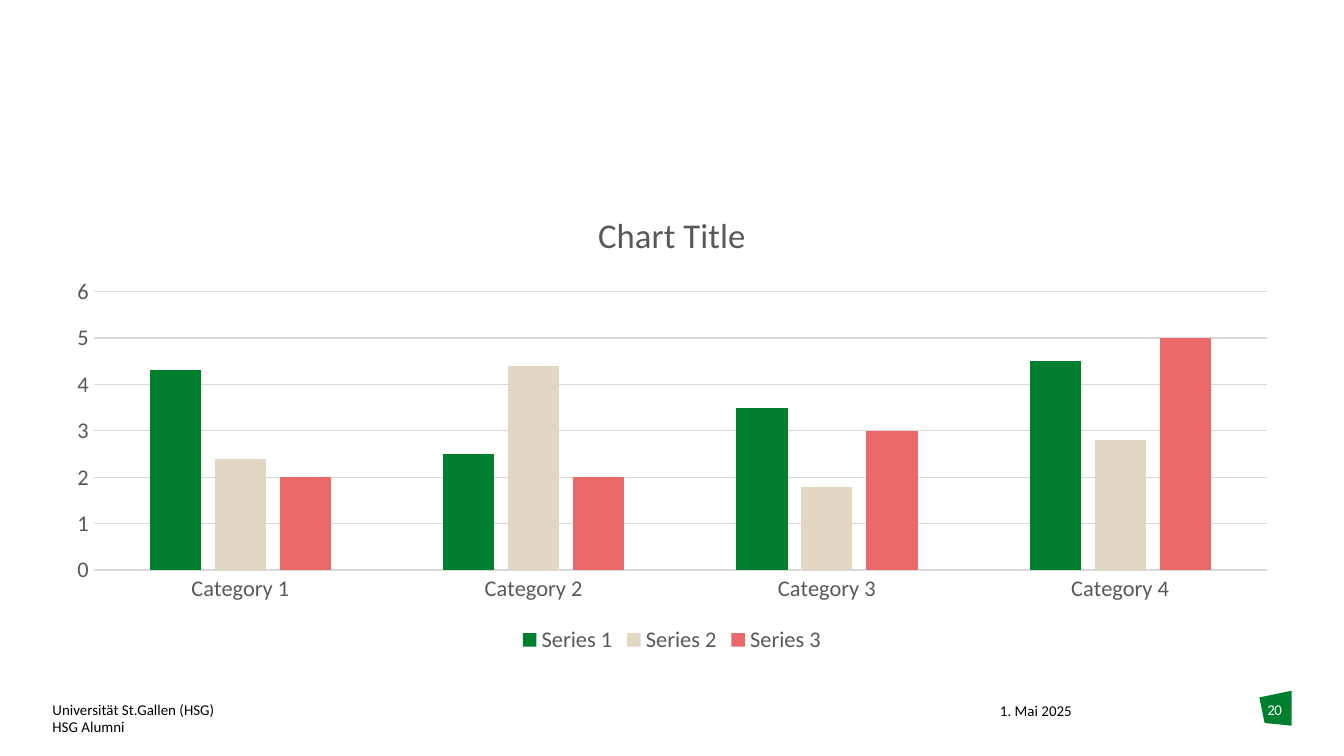
from pptx import Presentation
from pptx.chart.data import CategoryChartData
from pptx.dml.color import RGBColor
from pptx.enum import chart as ch, text
from pptx.util import Inches, Pt

FONT = "Calibri"
COLORS = {
    "green": "00802F",
    "sand": "E1D7C3",
    "red": "EB6969",
    "label": "595959",
    "grid": "D9D9D9",
    "black": "000000",
    "white": "FFFFFF",
}
CATEGORIES = ["Category 1", "Category 2", "Category 3", "Category 4"]
SERIES = [
    ("Series 1", "green", [4.3, 2.5, 3.5, 4.5]),
    ("Series 2", "sand", [2.4, 4.4, 1.8, 2.8]),
    ("Series 3", "red", [2, 2, 3, 5]),
]
BADGE = [(9.37, 5.19), (9.61, 5.14), (9.61, 5.4), (9.41, 5.38)]


def rgb(name):
    return RGBColor.from_string(COLORS[name])


def style_font(font, size, color):
    font.name = FONT
    font.size = Pt(size)
    font.bold = False
    font.color.rgb = rgb(color)


def style_line(line, color):
    line.color.rgb = rgb(color)
    line.width = Pt(0.75)


def add_label(s, box, lines, color="black", align=text.PP_ALIGN.LEFT):
    """Small footer text; lines are parted by line breaks."""
    tf = s.shapes.add_textbox(*map(Inches, box)).text_frame
    tf.word_wrap = True
    tf.margin_left = tf.margin_right = tf.margin_top = tf.margin_bottom = 0
    p = tf.paragraphs[0]
    p.alignment = align
    for i, line in enumerate(lines):
        if i:
            p.add_line_break()
        r = p.add_run()
        r.text = line
        style_font(r.font, 8, color)
        if color == "white":
            r.font._element.set("spc", "-30")


def add_badge(s):
    points = [(Inches(x), Inches(y)) for x, y in BADGE]
    builder = s.shapes.build_freeform(*points[0])
    builder.add_line_segments(points[1:], close=True)
    sp = builder.convert_to_shape()
    sp.shadow.inherit = False
    sp.fill.solid()
    sp.fill.fore_color.rgb = rgb("green")
    sp.line.fill.background()


def add_column_chart(s):
    data = CategoryChartData()
    data.categories = CATEGORIES
    for name, _, values in SERIES:
        data.add_series(name, values)
    chart = s.shapes.add_chart(
        ch.XL_CHART_TYPE.COLUMN_CLUSTERED,
        Inches(0.39), Inches(1.4), Inches(9.22), Inches(3.5), data).chart
    style_font(chart.font, 10, "black")

    # Title and legend
    tf = chart.chart_title.text_frame
    tf.text = "Chart Title"
    style_font(tf.paragraphs[0].runs[0].font, 18.6, "label")
    chart.chart_title.include_in_layout = False
    chart.has_legend = True
    chart.legend.position = ch.XL_LEGEND_POSITION.BOTTOM
    chart.legend.include_in_layout = False
    style_font(chart.legend.font, 12, "label")

    # Axes
    for axis in (chart.category_axis, chart.value_axis):
        axis.major_tick_mark = axis.minor_tick_mark = ch.XL_TICK_MARK.NONE
        style_font(axis.tick_labels.font, 12, "label")
    style_line(chart.category_axis.format.line, "grid")
    chart.value_axis.format.line.fill.background()
    style_line(chart.value_axis.major_gridlines.format.line, "grid")

    # Columns
    plot = chart.plots[0]
    plot.vary_by_categories = False
    plot.gap_width = 219
    plot.overlap = -27
    for series, (_, color, _) in zip(plot.series, SERIES):
        series.format.fill.solid()
        series.format.fill.fore_color.rgb = rgb(color)


def main():
    prs = Presentation()
    # Widescreen, 16:9
    prs.slide_width = Inches(10)
    prs.slide_height = prs.slide_width * 9 // 16
    s = prs.slides.add_slide(prs.slide_layouts[6])

    # Footer
    add_badge(s)
    add_label(s, (7.44, 5.22, 1.29, 0.2), ["1. Mai 2025"])
    add_label(s, (0.39, 5.21, 2.81, 0.21),
              ["Universität St.Gallen (HSG)", "HSG Alumni"])

    # Content
    add_column_chart(s)

    # Page number
    add_label(s, (9.37, 5.21, 0.23, 0.3), ["20"], "white",
              text.PP_ALIGN.CENTER)

    prs.save("out.pptx")


if __name__ == "__main__":
    main()
